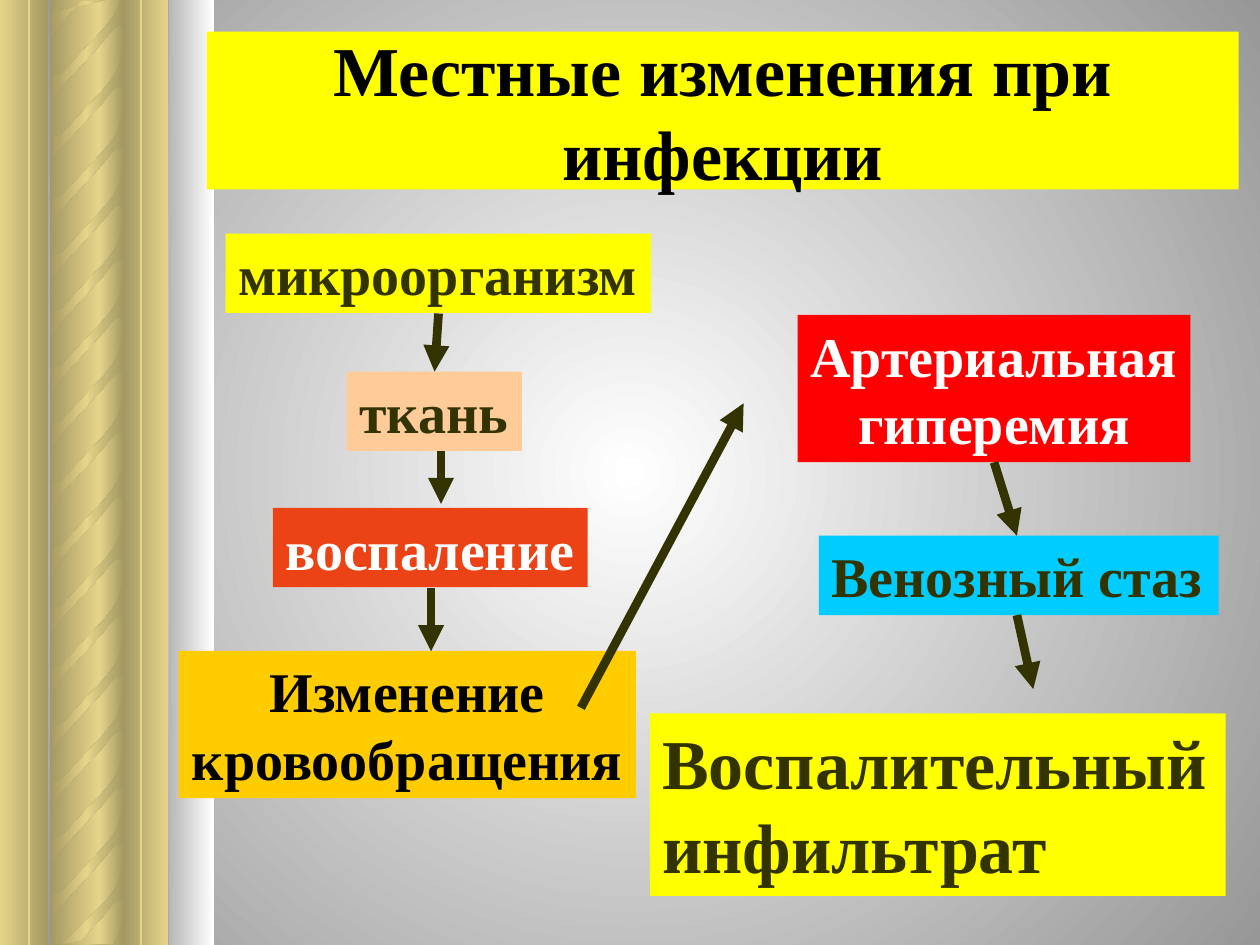
"""Builds a slide on local changes during infection, with a twisted column at the left."""
from pptx import Presentation
from pptx.dml.color import RGBColor
from pptx.enum.shapes import MSO_CONNECTOR as Link, MSO_SHAPE as Kind
from pptx.enum.text import MSO_ANCHOR as Anchor, MSO_AUTO_SIZE as Fit, PP_ALIGN as Align
from pptx.oxml import parse_xml
from pptx.oxml.ns import nsdecls, qn
from pptx.util import Cm, Pt

WIDE, HIGH, MID = 25.4, 19.05, 9.5
FONT = "Times New Roman"
INK, BLACK, WHITE, YELLOW = "333300", "000000", "FFFFFF", "FFFF00"
GOLD, BRONZE = "E5D58A", "A49863"

TITLE = ("Местные изменения при инфекции", (4.17, 0.64, 20.8, 3.18))
BOXES = [
    ("микроорганизм", (4.55, 4.71, 8.58, 1.6), YELLOW, INK, 32, Align.LEFT),
    ("ткань", (6.99, 7.49, 3.53, 1.6), "FFCC99", INK, 32, Align.LEFT),
    ("воспаление", (5.5, 10.24, 6.35, 1.6), "EB4315", WHITE, 32, Align.LEFT),
    ("Изменение\nкровообращения", (3.6, 13.12, 9.22, 2.97), "FFCC00", BLACK, 32, Align.CENTER),
    ("Артериальная\nгиперемия", (16.08, 6.35, 7.92, 2.97), "FF0000", WHITE, 32, Align.CENTER),
    ("Венозный стаз", (16.51, 10.8, 8.06, 1.6), "00CCFF", INK, 32, Align.LEFT),
    ("Воспалительный\nинфильтрат", (13.1, 14.38, 11.61, 3.68), YELLOW, INK, 40, Align.LEFT),
]
ARROWS = [
    (8.84, 6.32, 8.76, 7.49), (8.89, 9.09, 8.89, 10.16), (8.69, 11.86, 8.69, 13.13),
    (11.71, 14.27, 14.99, 8.13), (20.04, 9.32, 20.5, 10.8), (20.5, 12.4, 20.83, 13.89),
]
BANDS = [(2, 0.5, GOLD, BRONZE), (0, 0.97, GOLD, BRONZE),
         (1, 1, BRONZE, GOLD), (2.49, 0.89, BRONZE, GOLD)]
EDGE = (3.4, 0, 0.91, HIGH)
GROOVES = [0.58, 2.84]
HALVES = [
    (MID, HIGH, [11.63, 12.83, 13.94, 15.09, 16.21, 17.35, 10.44, 9.22]),
    (0, MID, [2.18, 3.33, 4.45, 5.59, 6.71, 18.42, 0.94, -0.28, -1.57, 7.92]),
]
TWIST = [
    (2.49, 0.23), (2.49, 0.84), (2.46, 0.81), (2.36, 0.81), (2.31, 0.84), (2.24, 0.91),
    (2.06, 1.14), (1.63, 1.6), (1.19, 2.08), (1.12, 2.21), (1.04, 2.36), (1.02, 2.57),
    (1, 2.84), (1, 1.6), (1, 1.73), (1.02, 1.78), (1.07, 1.8), (1.12, 1.8), (1.17, 1.8),
    (1.24, 1.78), (2.11, 0.84), (2.29, 0.61), (2.36, 0.48), (2.41, 0.36), (2.46, 0.15),
    (2.49, 0), (2.49, 0.51),
]
ACROSS = '<a:lin %s ang="0" scaled="1"/>'
ROUND = ('<a:path %s path="circle"><a:fillToRect l="50000" t="50000" '
         'r="50000" b="50000"/></a:path>')


def hue(code):
    return RGBColor.from_string(code)


def cms(nums):
    return [Cm(num) for num in nums]


def blend(fill, root, codes, way=ACROSS):
    fill.gradient()
    grad = root.find(".//" + qn("a:gradFill"))
    for kid in list(grad):
        grad.remove(kid)
    step = 100000 // (len(codes) - 1)
    stops = "".join(f'<a:gs pos="{i * step}"><a:srgbClr val="{code}"/></a:gs>'
                    for i, code in enumerate(codes))
    grad.append(parse_xml(f'<a:gsLst {nsdecls("a")}>{stops}</a:gsLst>'))
    grad.append(parse_xml(way % nsdecls("a")))


def paint(shape, codes):
    shape.shadow.inherit = False
    shape.line.fill.background()
    blend(shape.fill, shape._element, codes)


def twist(shapes, top, low, high):
    spots = [(Cm(x), Cm(min(max(top + y, low), high))) for x, y in TWIST]
    pen = shapes.build_freeform(*spots[0], scale=1.0)
    pen.add_line_segments(spots[1:], close=True)
    paint(pen.convert_to_shape(), [BRONZE, GOLD, BRONZE])


def line(shapes, ends, code, width):
    link = shapes.add_connector(Link.STRAIGHT, *cms(ends))
    link.line.color.rgb = hue(code)
    link.line.width = Pt(width)
    link._element.spPr.append(parse_xml(f'<a:effectLst {nsdecls("a")}/>'))
    return link


def arrow(shapes, ends):
    stroke = line(shapes, ends, INK, 5).line._get_or_add_ln()
    stroke.append(parse_xml(f'<a:tailEnd {nsdecls("a")} type="triangle"/>'))


def column(shapes):
    for low, high, tops in HALVES:
        for left, width, *codes in BANDS:
            spot = cms((left, low, width, high - low))
            paint(shapes.add_shape(Kind.RECTANGLE, *spot), codes)
        for top in tops:
            twist(shapes, top, low, HIGH)
    paint(shapes.add_shape(Kind.RECTANGLE, *cms(EDGE)), ["B6B6B6", WHITE])
    for x in GROOVES:
        line(shapes, (x, 0, x, HIGH), GOLD, 1)


def write(shape, text, back, code, size, align):
    shape.fill.solid()
    shape.fill.fore_color.rgb = hue(back)
    shape.text_frame.text = text
    for para in shape.text_frame.paragraphs:
        para.alignment = align
        for run in para.runs:
            font = run.font
            font.name, font.size, font.bold = FONT, Pt(size), True
            font.color.rgb = hue(code)


def head(shapes):
    text, spot = TITLE
    title = shapes.title
    title.left, title.top, title.width, title.height = cms(spot)
    write(title, text, YELLOW, BLACK, 40, Align.CENTER)
    title.text_frame.vertical_anchor = Anchor.MIDDLE
    title.text_frame.word_wrap = True
    title.text_frame.auto_size = Fit.NONE
    shapes._spTree.append(title._element)


def main():
    deck = Presentation()
    deck.slide_width, deck.slide_height = Cm(WIDE), Cm(HIGH)
    slide = deck.slides.add_slide(deck.slide_layouts[5])
    shapes = slide.shapes
    blend(slide.background.fill, slide._element, [WHITE, "979797"], ROUND)
    column(shapes)
    head(shapes)
    for text, spot, *look in BOXES:
        box = shapes.add_textbox(*cms(spot))
        write(box, text, *look)
        box.text_frame.word_wrap = False
        box.text_frame.auto_size = Fit.SHAPE_TO_FIT_TEXT
    for ends in ARROWS:
        arrow(shapes, ends)
    deck.save("out.pptx")


if __name__ == "__main__":
    main()
